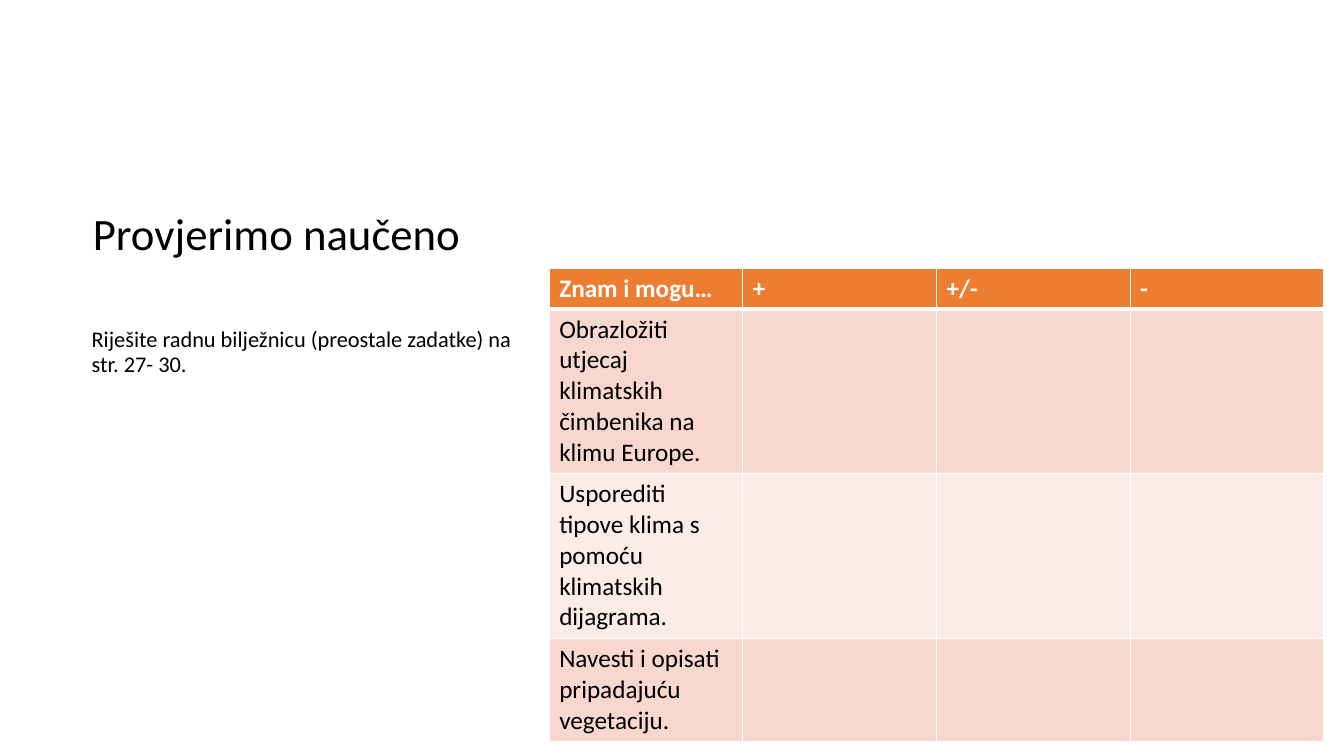
"""Build a slide with a self-assessment table on the climate of Europe."""
import pptx
import pptx.dml.color
import pptx.enum.text
import pptx.oxml
import pptx.oxml.ns
import pptx.util

Cm = pptx.util.Cm
RGBColor = pptx.dml.color.RGBColor
BLACK = RGBColor(0x00, 0x00, 0x00)
WHITE = RGBColor(0xFF, 0xFF, 0xFF)
ORANGE = RGBColor(0xED, 0x7D, 0x31)
BANDS = (RGBColor(0xF8, 0xD7, 0xCE), RGBColor(0xFC, 0xEC, 0xE8))

HEADINGS = ("Znam i mogu…", "+", "+/-", "-")
GOALS = (
    "Obrazložiti utjecaj klimatskih čimbenika na klimu Europe.",
    "Usporediti tipove klima s pomoću klimatskih dijagrama.",
    "Navesti i opisati pripadajuću vegetaciju.",
)
ROW_HEIGHTS = (1.02, 4.15, 4.15, 2.6)
COLUMN_WIDTH = 4.88


class SlideBuilder:
    """Hold the font and the current slide, and add its elements."""

    def __init__(self, presentation, font_name):
        self.font_name = font_name
        self.slide = presentation.slides.add_slide(presentation.slide_layouts[1])

    def format_font(self, paragraph, size, color, bold=False):
        font_format = {"name": self.font_name, "size": pptx.util.Pt(size), "bold": bold}
        for attribute, value in font_format.items():
            setattr(paragraph.font, attribute, value)
        paragraph.font.color.rgb = color

    def fill_placeholder(self, index, text, size, left, top, width, height):
        shape = self.slide.placeholders[index]
        position = {"left": left, "top": top, "width": width, "height": height}
        for attribute, value in position.items():
            setattr(shape, attribute, Cm(value))
        frame = shape.text_frame
        frame_format = {
            "text": text,
            "word_wrap": True,
            "auto_size": pptx.enum.text.MSO_AUTO_SIZE.NONE,
            "vertical_anchor": pptx.enum.text.MSO_ANCHOR.TOP,
            "margin_left": 0, "margin_right": 0, "margin_top": 0, "margin_bottom": 0,
        }
        for attribute, value in frame_format.items():
            setattr(frame, attribute, value)
        paragraph = frame.paragraphs[0]
        properties = paragraph._p.get_or_add_pPr()
        properties.set("marL", "0")
        properties.set("indent", "0")
        properties.append(pptx.oxml.parse_xml(f"<a:buNone {pptx.oxml.ns.nsdecls('a')}/>"))
        paragraph_format = {
            "alignment": pptx.enum.text.PP_ALIGN.LEFT,
            "line_spacing": 0.9,
            "space_before": pptx.util.Pt(0),
        }
        for attribute, value in paragraph_format.items():
            setattr(paragraph, attribute, value)
        self.format_font(paragraph, size, BLACK)

    def add_borders(self, cell, widths):
        properties = cell._tc.get_or_add_tcPr()
        for position, (side, width) in enumerate(widths.items()):
            properties.insert(position, pptx.oxml.parse_xml(
                f'<a:ln{side} {pptx.oxml.ns.nsdecls("a")} w="{pptx.util.Pt(width)}">'
                f'<a:solidFill><a:srgbClr val="{WHITE}"/></a:solidFill></a:ln{side}>'))

    def add_table(self, rows, left, top):
        column_count = len(rows[0])
        table = self.slide.shapes.add_table(
            len(rows), column_count, Cm(left), Cm(top),
            Cm(COLUMN_WIDTH * column_count), Cm(sum(ROW_HEIGHTS))).table
        for column in table.columns:
            column.width = Cm(COLUMN_WIDTH)
        for row_index, texts in enumerate(rows):
            table.rows[row_index].height = Cm(ROW_HEIGHTS[row_index])
            header = row_index == 0
            for column_index, text in enumerate(texts):
                cell = table.cell(row_index, column_index)
                cell.text = text
                cell.fill.solid()
                cell.fill.fore_color.rgb = ORANGE if header else BANDS[(row_index - 1) % 2]
                self.format_font(cell.text_frame.paragraphs[0], 18,
                                 WHITE if header else BLACK, header)
                self.add_borders(cell, {"L": 1, "R": 1, "T": 3 if row_index == 1 else 1,
                                        "B": 3 if header else 1})


def main():
    presentation = pptx.Presentation()
    presentation.slide_width = Cm(33.87)
    presentation.slide_height = Cm(19.05)
    builder = SlideBuilder(presentation, "Calibri")
    builder.fill_placeholder(0, "Provjerimo naučeno", 32, 2.34, 5.33, 10.92, 4.75)
    builder.fill_placeholder(
        1, "Riješite radnu bilježnicu (preostale zadatke) na str. 27- 30.",
        16, 2.31, 8.28, 10.92, 5.69)
    rows = [HEADINGS] + [(goal, "", "", "") for goal in GOALS]
    builder.add_table(rows, 13.84, 6.76)
    presentation.save("out.pptx")


if __name__ == "__main__":
    main()
